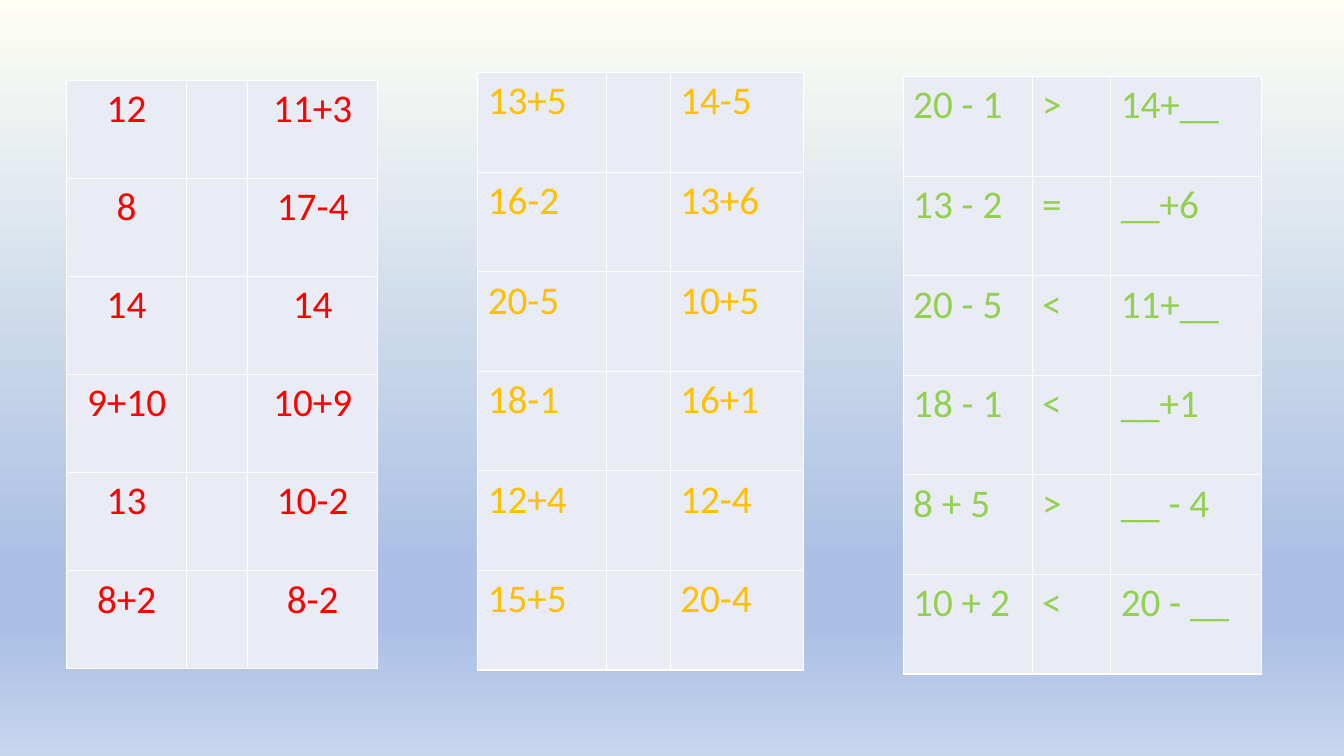
import pptx
import pptx.util
import pptx.dml.color
import pptx.enum.text
import pptx.oxml
import pptx.oxml.ns
import lxml.etree

Cm = pptx.util.Cm
RGB = pptx.dml.color.RGBColor
ALIGN = pptx.enum.text.PP_ALIGN
qn = pptx.oxml.ns.qn

RED = RGB(0xFF, 0x00, 0x00)
GOLD = RGB(0xFF, 0xC0, 0x00)
GREEN = RGB(0x92, 0xD0, 0x50)
WHITE = RGB(0xFF, 0xFF, 0xFF)
PALE = RGB(0xE9, 0xEB, 0xF5)
CREAM = RGB(0xFE, 0xFE, 0xF4)
BLUE = RGB(0xAB, 0xC0, 0xE4)
SKY = RGB(0xC7, 0xD5, 0xED)


class Deck:
    """Holds the text style and the current slide."""

    def __init__(self, prs):
        self.slide = prs.slides.add_slide(prs.slide_layouts[6])
        self.font = {"name": "Calibri", "size": pptx.util.Pt(28)}

    def back(self, stops):
        """Fill the background from top to bottom; stops are (percent, colour)."""
        fill = self.slide.background.fill
        fill.gradient()
        fill.gradient_angle = 270
        stop_list = next(self.slide.element.iter(qn("a:gsLst")))
        for old in list(stop_list):
            stop_list.remove(old)
        for place, tint in stops:
            stop = lxml.etree.SubElement(stop_list, qn("a:gs"), pos=str(place * 1000))
            lxml.etree.SubElement(stop, qn("a:srgbClr"), val=str(tint))

    def edge(self, cell):
        """Draw a thin white line on all four sides of a cell."""
        props = cell._tc.get_or_add_tcPr()
        for spot, side in enumerate(("lnL", "lnR", "lnT", "lnB")):
            line = lxml.etree.Element(qn("a:" + side), w=str(pptx.util.Pt(1)))
            paint = lxml.etree.SubElement(line, qn("a:solidFill"))
            lxml.etree.SubElement(paint, qn("a:srgbClr"), val=str(WHITE))
            props.insert(spot, line)

    def cell(self, cell, text, tint, align):
        cell.fill.solid()
        cell.fill.fore_color.rgb = PALE
        self.edge(cell)
        if text:
            para = cell.text_frame.paragraphs[0]
            para.alignment = align
            run = para.add_run()
            run.text = text
            for key, value in self.font.items():
                setattr(run.font, key, value)
            run.font.color.rgb = tint

    def table(self, left, top, widths, height, rows, tint, align=ALIGN.LEFT):
        frame = self.slide.shapes.add_table(
            len(rows), len(widths), Cm(left), Cm(top),
            Cm(sum(widths)), Cm(height * len(rows)))
        grid = frame.table
        for key in ("first_row", "horz_banding"):
            setattr(grid, key, False)
        for col, width in zip(grid.columns, widths):
            col.width = Cm(width)
        for r, row in enumerate(rows):
            grid.rows[r].height = Cm(height)
            for c, text in enumerate(row):
                self.cell(grid.cell(r, c), text, tint, align)


def main():
    prs = pptx.Presentation()
    prs.slide_width, prs.slide_height = Cm(33.87), Cm(19.05)
    deck = Deck(prs)
    deck.back([(0, CREAM), (74, BLUE), (83, BLUE), (100, SKY)])

    # Compare numbers and sums
    deck.table(1.68, 2.03, (3.02, 1.54, 3.28), 2.47, [
        ("12", "", "11+3"),
        ("8", "", "17-4"),
        ("14", "", "14"),
        ("9+10", "", "10+9"),
        ("13", "", "10-2"),
        ("8+2", "", "8-2"),
    ], RED, ALIGN.CENTER)

    # Compare two sums
    deck.table(12.04, 1.83, (3.25, 1.6, 3.35), 2.51, [
        ("13+5", "", "14-5"),
        ("16-2", "", "13+6"),
        ("20-5", "", "10+5"),
        ("18-1", "", "16+1"),
        ("12+4", "", "12-4"),
        ("15+5", "", "20-4"),
    ], GOLD)

    # Find the missing number
    deck.table(22.76, 1.93, (3.25, 1.98, 3.81), 2.51, [
        ("20 - 1", ">", "14+__"),
        ("13 - 2", "=", "__+6"),
        ("20 - 5", "<", "11+__"),
        ("18 - 1", "<", "__+1"),
        ("8 + 5", ">", "__ - 4"),
        ("10 + 2", "<", "20 - __"),
    ], GREEN)

    prs.save("out.pptx")


if __name__ == "__main__":
    main()
